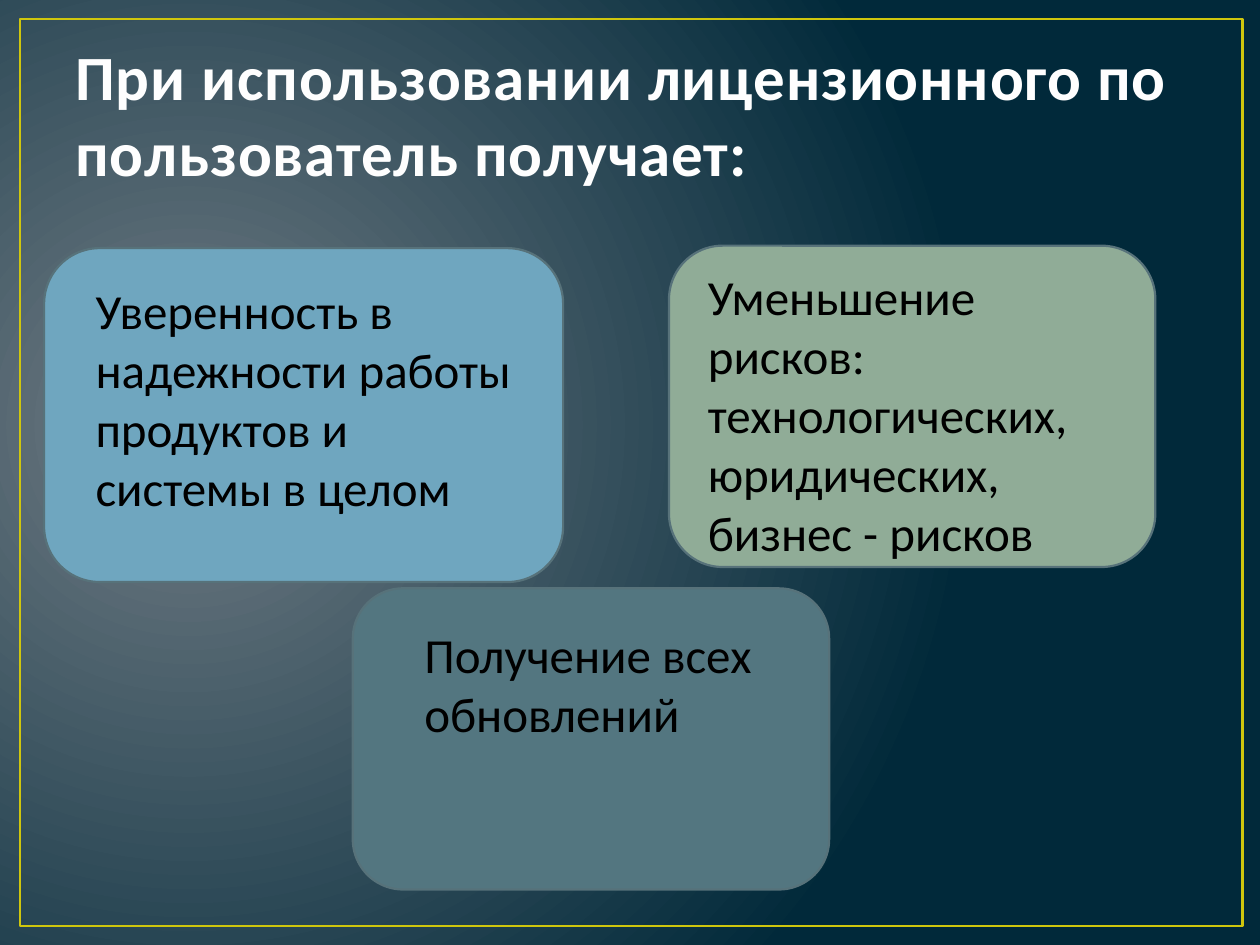
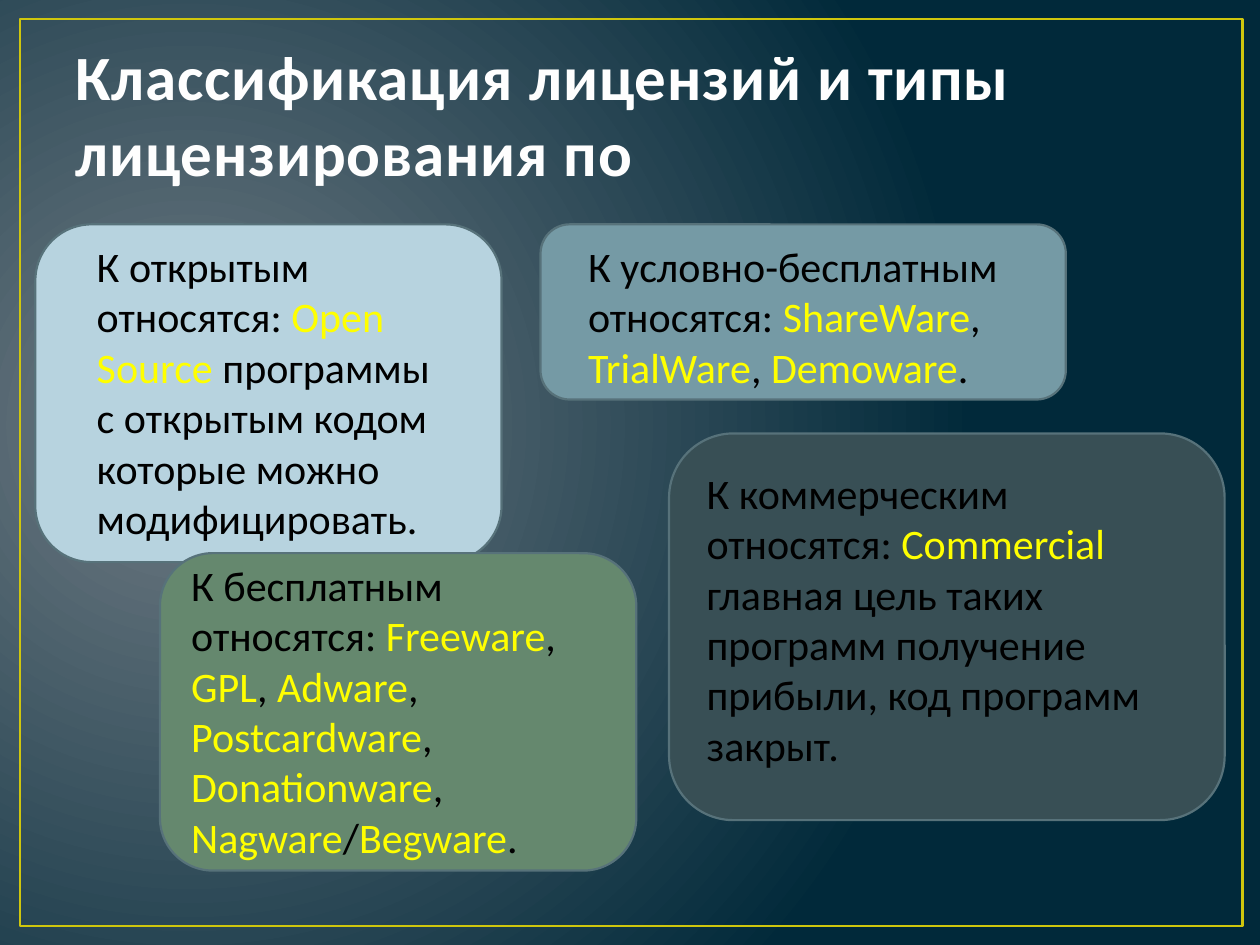
from dataclasses import dataclass

from lxml.etree import SubElement
from pptx import Presentation
from pptx.dml.color import RGBColor
from pptx.enum.shapes import MSO_SHAPE
from pptx.enum.text import MSO_ANCHOR
from pptx.oxml import parse_xml
from pptx.oxml.ns import nsdecls, qn
from pptx.util import Pt


@dataclass(frozen=True)
class Theme:
    font: str = "Calibri"
    glow: str = "717C84"
    night: str = "01293A"
    frame: str = "CFC60D"
    card_line: str = "57727A"
    title: str = "FEFEFE"
    body: str = "000000"
    highlight: str = "FFFF00"
    title_size: int = 36


theme = Theme()

# Each slide: title, body size, cards.
# Each card: fill, card area, text area, text with highlighted terms between asterisks.
SLIDES = [
    ("При использовании лицензионного по пользователь получает:", 28, [
        ("6FA6BF", (25.2, 141.8, 296.6, 190.8), (47.5, 157, 252.7, 143.3),
         "Уверенность в надежности работы продуктов и системы в целом"),
        ("90AC97", (382.3, 140.4, 277.9, 183.6), (397.4, 149, 248.4, 177.1),
         "Уменьшение рисков: технологических, юридических, бизнес - рисков"),
        ("537680", (201.6, 336.2, 272.2, 172.1), (235.4, 353.5, 231.1, 74.9),
         "Получение всех обновлений"),
    ]),
    ("Классификация лицензий и типы лицензирования по", 24, [
        ("B7D3DF", (20.2, 128.2, 266.4, 193), (48.2, 133.9, 209.5, 181.4),
         "К открытым относятся: *Open Source* программы с открытым кодом "
         "которые можно модифицировать."),
        ("65886E", (91.4, 316.1, 272.2, 181.4), (102.2, 316.1, 261.4, 181.4),
         "К бесплатным относятся: *Freeware*, *GPL*, *Adware*, *Postcardware*, "
         "*Donationware*, *Nagware*/*Begware*."),
        ("759AA5", (308.9, 128.2, 300.2, 100.1), (329, 133.9, 260.6, 94.3),
         "К условно-бесплатным относятся: *ShareWare*, *TrialWare*, *Demoware*."),
        ("384F55", (382.3, 247.7, 317.5, 221), (396.7, 263.5, 289.4, 244.8),
         "К коммерческим относятся: *Commercial* главная цель таких программ "
         "получение прибыли, код программ закрыт."),
    ]),
]


def add_panel(shapes, preset, area, line, line_width, fill=None):
    """Add an outlined preset shape, unfilled unless a fill colour is given."""
    panel = shapes.add_shape(preset, *map(Pt, area))
    panel.shadow.inherit = False
    panel.line.color.rgb = RGBColor.from_string(line)
    panel.line.width = Pt(line_width)
    if fill:
        panel.fill.solid()
        panel.fill.fore_color.rgb = RGBColor.from_string(fill)
    else:
        panel.fill.background()


def add_text(shapes, area, text, size, colors):
    """Add a wrapped text box; runs between asterisks take the second colour."""
    box = shapes.add_textbox(*map(Pt, area))
    box.text_frame.word_wrap = True
    para = box.text_frame.paragraphs[0]
    for index, piece in enumerate(text.split("*")):
        span = para.add_run()
        span.text = piece
        span.font.name = theme.font
        span.font.size = Pt(size)
        span.font.color.rgb = RGBColor.from_string(colors[index % 2])
    return box


deck = Presentation()
deck.slide_width, deck.slide_height = Pt(720), Pt(540)

for title, body_size, cards in SLIDES:
    page = deck.slides.add_slide(deck.slide_layouts[6])

    # Radial background
    background = parse_xml(
        f'<p:bg {nsdecls("p", "a")}><p:bgPr><a:gradFill rotWithShape="1"><a:gsLst/>'
        '<a:path path="circle"><a:fillToRect l="15000" t="50000" r="85000" b="60000"/></a:path>'
        '</a:gradFill><a:effectLst/></p:bgPr></p:bg>')
    stops = background.find(".//" + qn("a:gsLst"))
    for position, color in (("0", theme.glow), ("100000", theme.night)):
        stop = SubElement(stops, qn("a:gs"), pos=position)
        SubElement(stop, qn("a:srgbClr"), val=color)
    page.element.cSld.insert(0, background)

    # Frame and title
    add_panel(page.shapes, MSO_SHAPE.RECTANGLE, (11.5, 10.8, 698.4, 518.4), theme.frame, 1.5)
    heading = add_text(page.shapes, (36, 21.6, 648, 90), title, theme.title_size, (theme.title,))
    heading.text_frame.vertical_anchor = MSO_ANCHOR.BOTTOM
    title_span = heading.text_frame.paragraphs[0].runs[0]
    title_span.font.bold = True
    title_span.font._element.set("spc", "50")

    # Cards with their captions
    for fill, card_area, text_area, text in cards:
        card = page.shapes.add_group_shape()
        add_panel(card.shapes, MSO_SHAPE.ROUNDED_RECTANGLE, card_area,
                  theme.card_line, 1.25, fill)
        add_text(card.shapes, text_area, text, body_size, (theme.body, theme.highlight))

deck.save("out.pptx")
